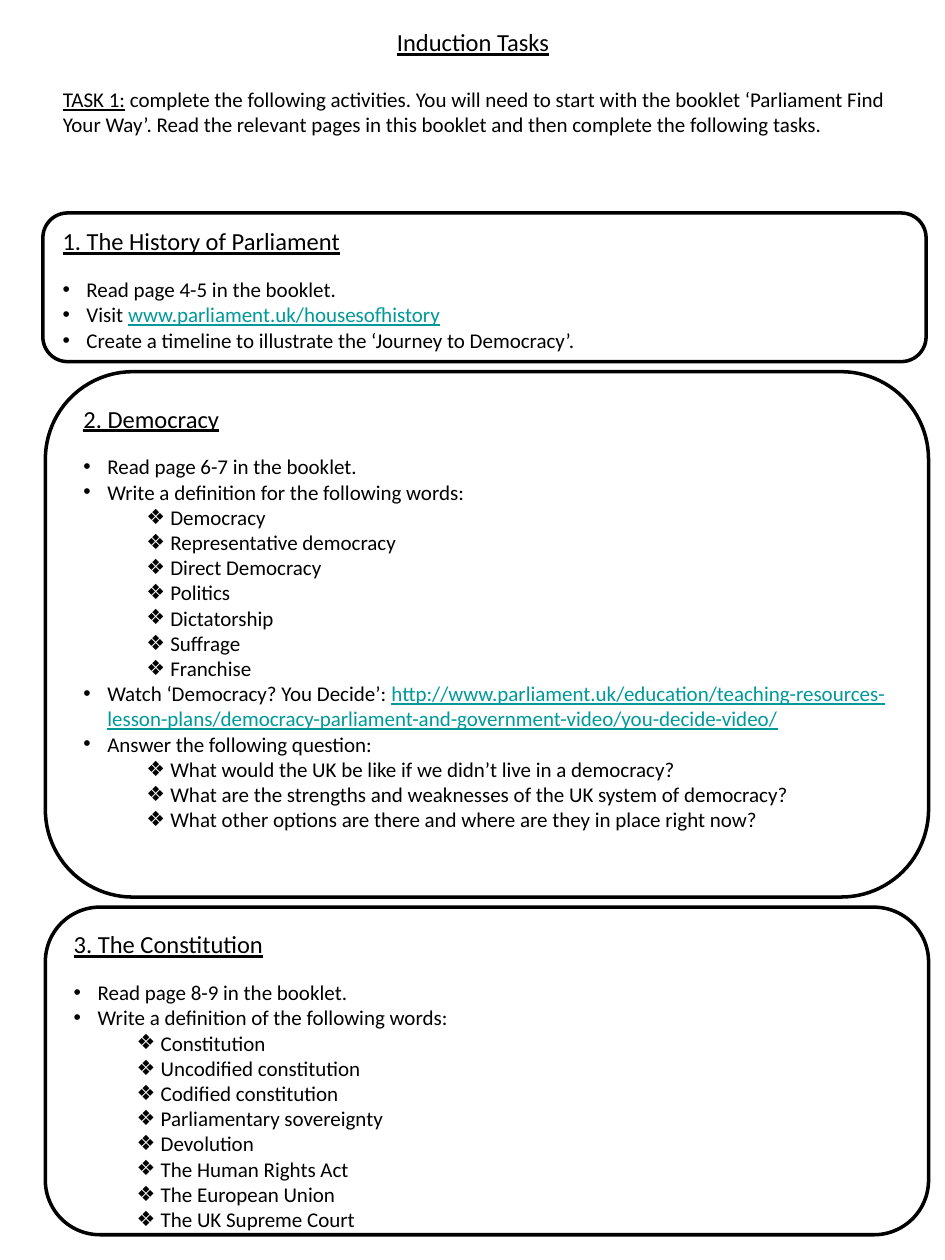
"""Build the one-page Induction Tasks worksheet."""
from dataclasses import dataclass

import lxml.etree
import pptx
import pptx.dml.color
import pptx.enum.shapes
import pptx.enum.text
import pptx.oxml.ns
import pptx.util

Inches = pptx.util.Inches
Pt = pptx.util.Pt
BLACK, WHITE, TEAL = "000000", "FFFFFF", "009999"
HANGING = 0.19


@dataclass
class Item:
    text: str
    link: str = ""
    level: int = 0


@dataclass
class Task:
    heading: str
    left: float
    top: float
    height: float
    items: list[Item]


def sub_items(*texts: str) -> list[Item]:
    return [Item(text, level=1) for text in texts]


TASKS = [
    Task("1. The History of Parliament", 0.34, 1.69, 1.18, [
        Item("Read page 4-5 in the booklet."),
        Item("Visit ", "www.parliament.uk/housesofhistory"),
        Item("Create a timeline to illustrate the ‘Journey to Democracy’."),
    ]),
    Task("2. Democracy", 0.36, 2.95, 4.17, [
        Item("Read page 6-7 in the booklet."),
        Item("Write a definition for the following words:"),
        *sub_items("Democracy", "Representative democracy", "Direct Democracy",
                   "Politics", "Dictatorship", "Suffrage", "Franchise"),
        Item("Watch ‘Democracy? You Decide’: ",
             "http://www.parliament.uk/education/teaching-resources-lesson-plans/"
             "democracy-parliament-and-government-video/you-decide-video/"),
        Item("Answer the following question:"),
        *sub_items(
            "What would the UK be like if we didn’t live in a democracy?",
            "What are the strengths and weaknesses of the UK system of democracy?",
            "What other options are there and where are they in place right now?"),
    ]),
    Task("3. The Constitution", 0.36, 7.2, 2.6, [
        Item("Read page 8-9 in the booklet."),
        Item("Write a definition of the following words:"),
        *sub_items("Constitution", "Uncodified constitution", "Codified constitution",
                   "Parliamentary sovereignty", "Devolution", "The Human Rights Act",
                   "The European Union", "The UK Supreme Court"),
    ]),
]


def color(value: str) -> pptx.dml.color.RGBColor:
    return pptx.dml.color.RGBColor.from_string(value)


def style(paragraph, size: int, underline: bool = False) -> None:
    font = paragraph.font
    font.name, font.size, font.underline = "Calibri", Pt(size), underline
    font.color.rgb = color(BLACK)


def add_bullet(paragraph, level: int) -> None:
    paragraph.level = level
    properties = paragraph._p.get_or_add_pPr()
    properties.set("marL", str(Inches(HANGING + 0.5 * level)))
    properties.set("indent", str(-Inches(HANGING)))
    qualified = pptx.oxml.ns.qn
    lxml.etree.SubElement(properties, qualified("a:buFont"), typeface="Arial")
    lxml.etree.SubElement(properties, qualified("a:buChar"), char="•❖"[level])


def add_item(frame, item: Item) -> None:
    para = frame.add_paragraph()
    para.alignment = pptx.enum.text.PP_ALIGN.LEFT
    add_bullet(para, item.level)
    style(para, 12)
    para.add_run().text = item.text
    if item.link:
        span = para.add_run()
        span.text = item.link
        span.font.underline = True
        span.font.color.rgb = color(TEAL)


def add_task(page, task: Task) -> None:
    box = page.shapes.add_shape(
        pptx.enum.shapes.MSO_SHAPE.ROUNDED_RECTANGLE,
        Inches(task.left), Inches(task.top), Inches(7.01), Inches(task.height))
    box.shadow.inherit = False
    box.fill.solid()
    box.fill.fore_color.rgb = color(WHITE)
    box.line.color.rgb = color(BLACK)
    box.line.width = Pt(2)
    frame = box.text_frame
    frame.word_wrap = True
    frame.vertical_anchor = pptx.enum.text.MSO_ANCHOR.TOP
    heading = frame.paragraphs[0]
    heading.text = task.heading
    heading.alignment = pptx.enum.text.PP_ALIGN.LEFT
    heading.space_after = Pt(12)
    style(heading, 14, underline=True)
    for item in task.items:
        add_item(frame, item)


def add_title(page) -> None:
    title = page.shapes.title
    title.left, title.top = Inches(0.38), Inches(0.12)
    title.width, title.height = Inches(6.75), Inches(0.43)
    title.text_frame.vertical_anchor = pptx.enum.text.MSO_ANCHOR.MIDDLE
    para = title.text_frame.paragraphs[0]
    para.text = "Induction Tasks"
    para.alignment = pptx.enum.text.PP_ALIGN.CENTER
    style(para, 14, underline=True)


def add_introduction(page) -> None:
    box = page.shapes.add_textbox(Inches(0.4), Inches(0.64), Inches(6.79), Inches(0.5))
    box.text_frame.word_wrap = True
    para = box.text_frame.paragraphs[0]
    style(para, 12)
    label = para.add_run()
    label.text = "TASK 1:"
    label.font.underline = True
    para.add_run().text = (
        " complete the following activities. You will need to start with the booklet "
        "‘Parliament Find Your Way’. Read the relevant pages in this booklet and then "
        "complete the following tasks.")


def main() -> None:
    deck = pptx.Presentation()
    deck.slide_width, deck.slide_height = Inches(7.5), Inches(10)
    page = deck.slides.add_slide(deck.slide_layouts.get_by_name("Title Only"))
    add_title(page)
    add_introduction(page)
    for task in TASKS:
        add_task(page, task)
    deck.save("out.pptx")


if __name__ == "__main__":
    main()
